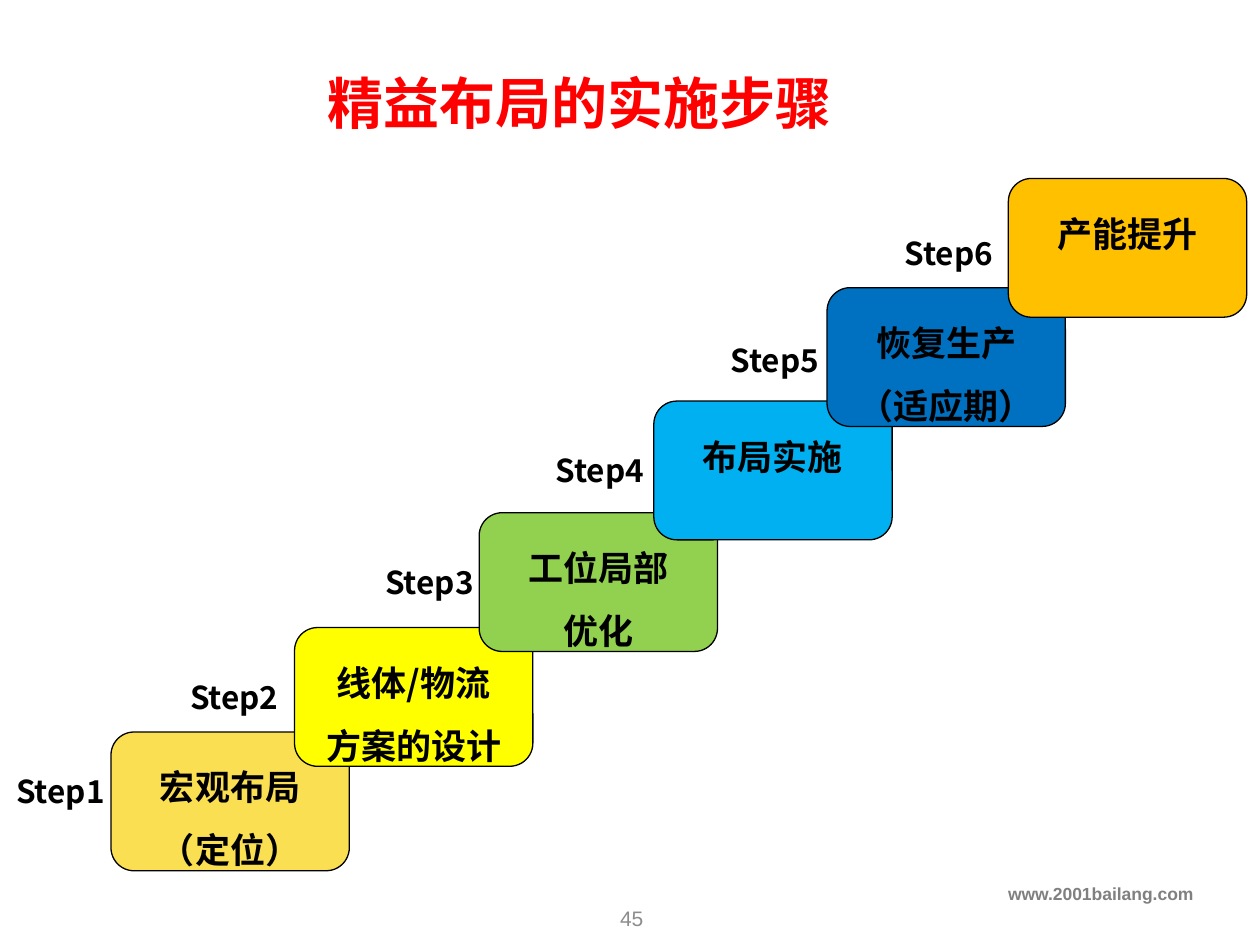
from lxml import etree
from pptx import Presentation
from pptx.dml.color import RGBColor
from pptx.enum.shapes import MSO_SHAPE
from pptx.enum.text import MSO_ANCHOR, MSO_AUTO_SIZE, PP_ALIGN
from pptx.oxml.ns import qn
from pptx.util import Pt

CJK = "Noto Sans CJK SC"
BLACK = RGBColor(0x00, 0x00, 0x00)
RED = RGBColor(0xFF, 0x00, 0x00)
GRAY = RGBColor(0x80, 0x80, 0x80)
LIGHT_GRAY = RGBColor(0x8C, 0x8C, 0x8C)
SAND = RGBColor(0xFB, 0xDF, 0x53)
YELLOW = RGBColor(0xFF, 0xFF, 0x00)
GREEN = RGBColor(0x92, 0xD0, 0x50)
SKY = RGBColor(0x00, 0xB0, 0xF0)
BLUE = RGBColor(0x00, 0x70, 0xC0)
AMBER = RGBColor(0xFF, 0xC0, 0x00)

STEP_W, STEP_H = 136.2, 79.3
LABEL_W, LABEL_H = 66.2, 29
STEPS = [
    (63.4, 418.3, 2.2, 437.8, SAND, "宏观布局\n（定位）"),
    (168.3, 358.6, 101.5, 383.8, YELLOW, "线体/物流\n方案的设计"),
    (273.8, 293, 213.1, 318.2, GREEN, "工位局部\n优化"),
    (373.6, 229.2, 310.3, 254.2, SKY, "布局实施"),
    (472.6, 164.4, 410.4, 191.5, BLUE, "恢复生产\n（适应期）"),
    (576.2, 102, 509.8, 130.3, AMBER, "产能提升"),
]


def write(tf, text, size=18, color=BLACK, font=CJK, bold=True,
          align=PP_ALIGN.LEFT, anchor=MSO_ANCHOR.TOP, wrap=True, spacing=None):
    """Fill a text frame, one paragraph per line of text."""
    tf.word_wrap = wrap
    tf.vertical_anchor = anchor
    for i, line in enumerate(text.split("\n")):
        p = tf.paragraphs[0] if i == 0 else tf.add_paragraph()
        p.alignment = align
        p.line_spacing = spacing
        r = p.add_run()
        r.text = line
        r.font.name, r.font.size, r.font.bold = font, Pt(size), bold
        r.font.color.rgb = color
        ea = etree.SubElement(r.font._element, qn("a:ea"))
        ea.set("typeface", CJK)


def add_text(slide, box, text, **fmt):
    """Add a text box at the given left, top, width and height."""
    sp = slide.shapes.add_textbox(*map(Pt, box))
    write(sp.text_frame, text, **fmt)
    return sp


def add_title(slide, box, text):
    """Move and format the title placeholder."""
    sp = slide.shapes.title
    sp.left, sp.top, sp.width, sp.height = map(Pt, box)
    write(sp.text_frame, text, size=32, color=RED, font="Arial",
          align=PP_ALIGN.CENTER, anchor=MSO_ANCHOR.MIDDLE)
    sp.text_frame.auto_size = MSO_AUTO_SIZE.NONE


def add_step(slide, box, fill, text):
    """Add one stair of the staircase."""
    sp = slide.shapes.add_shape(MSO_SHAPE.ROUNDED_RECTANGLE, *map(Pt, box))
    sp.shadow.inherit = False
    sp.fill.solid()
    sp.fill.fore_color.rgb = fill
    sp.line.color.rgb = BLACK
    sp.line.width = Pt(0.75)
    write(sp.text_frame, text, size=20, align=PP_ALIGN.CENTER, spacing=1.5)


def add_label(slide, box, text):
    """Add the step number beside a stair."""
    sp = add_text(slide, box, text, wrap=False)
    sp.text_frame.auto_size = MSO_AUTO_SIZE.SHAPE_TO_FIT_TEXT


def add_footer(slide, address_box, number_box):
    """Add the web address and the page number."""
    add_text(slide, address_box, "www.2001bailang.com", size=10, color=GRAY,
             font="Arial", align=PP_ALIGN.RIGHT)
    add_text(slide, number_box, "45", size=12, color=LIGHT_GRAY, font="Arial",
             bold=False, align=PP_ALIGN.CENTER, anchor=MSO_ANCHOR.MIDDLE)


def main():
    """Build the slide and save it."""
    prs = Presentation()
    prs.slide_width, prs.slide_height = Pt(720), Pt(540)
    slide = prs.slides.add_slide(prs.slide_layouts[5])
    add_title(slide, (87.8, 36, 487.4, 44.6), "精益布局的实施步骤")
    add_footer(slide, (0, 501.1, 689, 25.2), (280, 510.5, 162, 28.8))
    for left, top, _, _, fill, text in STEPS:
        add_step(slide, (left, top, STEP_W, STEP_H), fill, text)
    for n, (_, _, left, top, _, _) in enumerate(STEPS, 1):
        add_label(slide, (left, top, LABEL_W, LABEL_H), f"Step{n}")
    prs.save("out.pptx")


if __name__ == "__main__":
    main()
